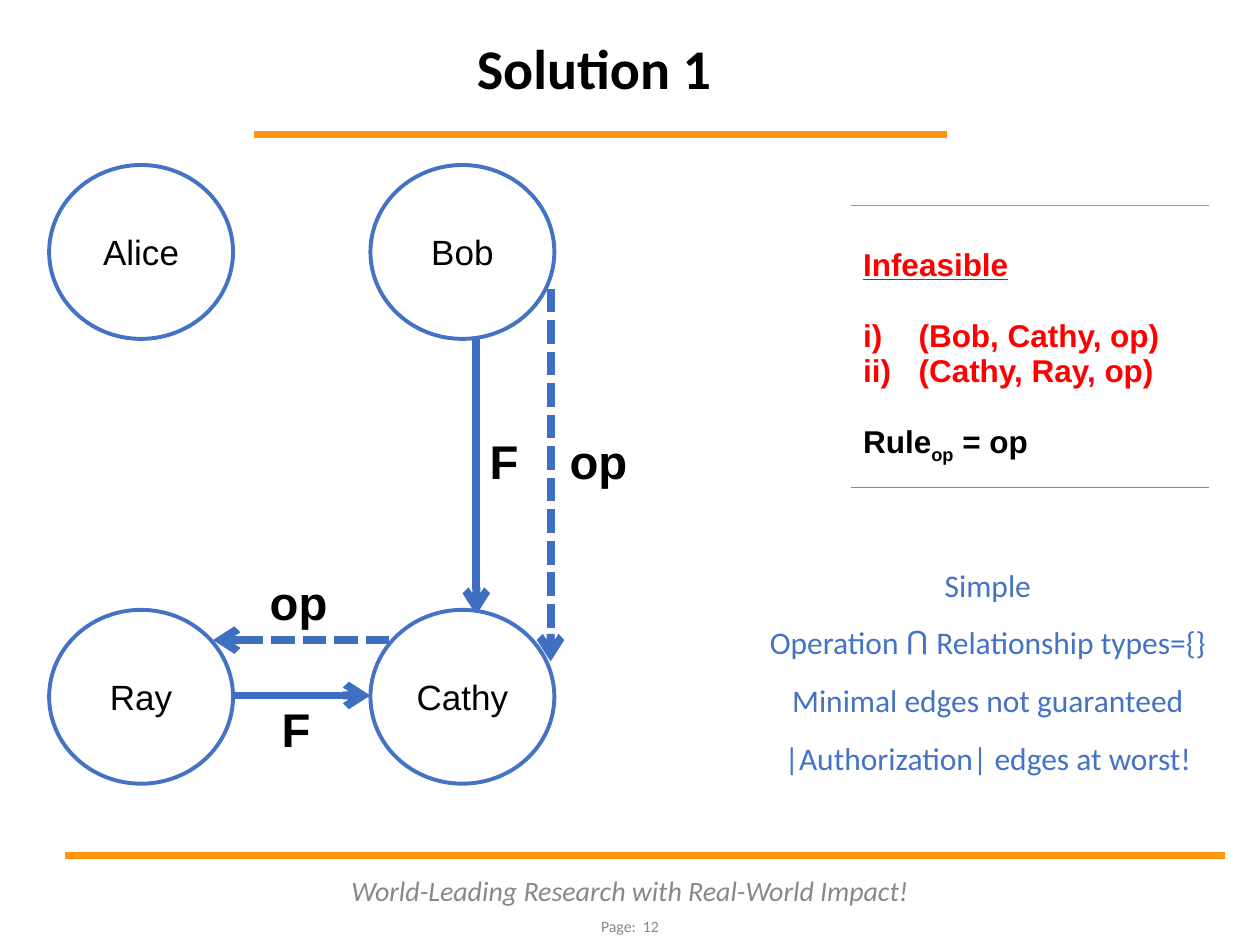
from lxml import etree
from pptx import Presentation, util as u
from pptx.dml.color import RGBColor
from pptx.enum import shapes, text
from pptx.oxml.ns import qn

COLS, ROWS = 100, 75
CELL = u.Inches(0.1)
BLACK, WHITE, RED, GREY = "000000", "FFFFFF", "FF0000", "888888"
ORANGE, BLUE, ARROW_BLUE = "FF950E", "4472C4", "3F6FC3"
CENTER, MIDDLE = text.PP_ALIGN.CENTER, text.MSO_ANCHOR.MIDDLE


def grid(*cells):
    return [round(c * CELL) for c in cells]


def color(value):
    return RGBColor.from_string(value)


def add_run(p, words, size, name, rgb, bold=False, italic=False):
    r = p.add_run()
    r.text = words
    r.font.size, r.font.name = u.Pt(size), name
    r.font.bold, r.font.italic = bold, italic
    r.font.color.rgb = color(rgb)
    return r


def label(s, box, words, size, name, rgb, anchor=MIDDLE, **style):
    tf = s.shapes.add_textbox(*grid(*box)).text_frame
    tf.word_wrap, tf.vertical_anchor = True, anchor
    p = tf.paragraphs[0]
    p.alignment = CENTER
    add_run(p, words, size, name, rgb, **style)


def line(s, x1, y1, x2, y2, rgb, width, arrow=False, dashed=False):
    c = s.shapes.add_connector(shapes.MSO_CONNECTOR.STRAIGHT, *grid(x1, y1, x2, y2))
    c.line.color.rgb, c.line.width = color(rgb), u.Pt(width)
    ln = c.line._get_or_add_ln()
    if dashed:
        etree.SubElement(ln, qn("a:prstDash"), val="sysDash")
    if arrow:
        etree.SubElement(ln, qn("a:tailEnd"), type="arrow")
    etree.SubElement(c._element.spPr, qn("a:effectLst"))


def header(s, box):
    x, y, w, h = box
    label(s, (x, y, w, h * 0.7), "Solution 1", 32, "Calibri", BLACK,
          text.MSO_ANCHOR.BOTTOM, bold=True)
    line(s, x, y + h, x + w + 1.1, y + h, ORANGE, 4)


def footer(s, box):
    x, y, w, h = box
    line(s, x, y, x + w, y, ORANGE, 4)
    label(s, (COLS / 2 - 24, y + 1, 48, 3.6),
          "World-Leading Research with Real-World Impact!", 16, "Calibri", GREY, italic=True)
    label(s, (COLS / 2 - 9.4, y + 3.8, 18.8, 3.6), "Page:  12", 9, "Calibri", GREY)


def node(s, box, name):
    sp = s.shapes.add_shape(shapes.MSO_SHAPE.OVAL, *grid(*box))
    sp.shadow.inherit = False
    sp.fill.solid()
    sp.fill.fore_color.rgb = color(WHITE)
    sp.line.color.rgb, sp.line.width = color(BLUE), u.Pt(2.25)
    sp.text_frame.vertical_anchor = MIDDLE
    p = sp.text_frame.paragraphs[0]
    p.alignment = CENTER
    add_run(p, name, 20, "Arial", BLACK)


def graph(s, box):
    x, y, w, h = box
    node_w, node_h = 14.6, 13.8
    right, low = x + w - node_w, y + h - node_h
    line(s, x + 33.9, y + node_h - 0.2, x + 33.9, low + 0.4, ARROW_BLUE, 4.5, arrow=True)
    for left, top, name in ((x, y, "Alice"), (right, y, "Bob"),
                            (x, low, "Ray"), (right, low, "Cathy")):
        node(s, (left, top, node_w, node_h), name)
    line(s, x + node_w, low + 6.8, right, low + 6.8, ARROW_BLUE, 4.5, arrow=True)
    line(s, x + 39.8, y + 9.8, x + 39.8, low + 4.1, ARROW_BLUE, 4.5, arrow=True, dashed=True)
    line(s, right + 1.5, low + 2.4, x + 13, low + 2.4, ARROW_BLUE, 4.5, arrow=True, dashed=True)
    for center, top, words in ((36.1, 20.7, "F"), (43.6, 20.7, "op"),
                               (19.8, 31.9, "op"), (19.6, 42, "F")):
        label(s, (x + center - 4, y + top, 8, 5.6), words, 27, "Arial", BLACK,
              text.MSO_ANCHOR.TOP, bold=True)


def one_cell_table(s, box, top_margin):
    table = s.shapes.add_table(1, 1, *grid(*box)).table
    table.first_row = table.horz_banding = False
    cell = table.cell(0, 0)
    cell.fill.background()
    cell.margin_top = grid(top_margin)[0]
    return cell


def border(cell, index, side, rgb, width):
    ln = etree.Element(qn(f"a:{side}"), w=str(u.Pt(width)))
    fill = etree.SubElement(ln, qn("a:solidFill"))
    etree.SubElement(fill, qn("a:srgbClr"), val=rgb)
    cell._tc.get_or_add_tcPr().insert(index, ln)


def verdict(s, box):
    cell = one_cell_table(s, box, 3.35)
    border(cell, 0, "lnT", "ED7D31", 1)
    border(cell, 1, "lnB", GREY, 0.5)
    tf = cell.text_frame
    add_run(tf.paragraphs[0], "Infeasible", 18, "Arial", RED, bold=True).font.underline = True
    for i, words in enumerate(("(Bob, Cathy, op)", "(Cathy, Ray, op)")):
        p = tf.add_paragraph()
        p.space_before = u.Pt(0 if i else 20.5)
        pPr = p._p.get_or_add_pPr()
        pPr.set("marL", str(u.Inches(0.44)))
        pPr.set("indent", str(u.Inches(-0.44)))
        etree.SubElement(pPr, qn("a:buFont"), typeface="+mj-lt")
        etree.SubElement(pPr, qn("a:buAutoNum"), type="romanLcParenR")
        add_run(p, words, 18, "Arial", RED, bold=True)
    p = tf.add_paragraph()
    p.space_before = u.Pt(20.5)
    add_run(p, "Rule", 18, "Arial", BLACK, bold=True)
    r = add_run(p, "op", 18, "Arial", BLACK, bold=True)
    r.font._element.set("baseline", "-25000")
    add_run(p, " = op", 18, "Arial", BLACK, bold=True)


def remarks(s, box):
    tf = one_cell_table(s, box, 5).text_frame
    for i, words in enumerate(("Simple", "Operation ꓵ Relationship types={}",
                               "Minimal edges not guaranteed",
                               "|Authorization| edges at worst!")):
        p = tf.add_paragraph() if i else tf.paragraphs[0]
        p.alignment = CENTER
        if i:
            p.space_before = u.Pt(11)
        add_run(p, words, 18, "Calibri", BLUE)


def main():
    prs = Presentation()
    prs.slide_width, prs.slide_height = grid(COLS, ROWS)
    s = prs.slides.add_slide(prs.slide_layouts[6])
    header(s, (20.2, 3.4, 53.9, 7.3))
    footer(s, (5.2, 67.9, 92, 7.1))
    graph(s, (3.9, 13.1, 40.1, 49.1))
    verdict(s, (67.5, 16.3, 28.5, 22.4))
    remarks(s, (56.4, 40, 44, 25))
    prs.save("out.pptx")


if __name__ == "__main__":
    main()
